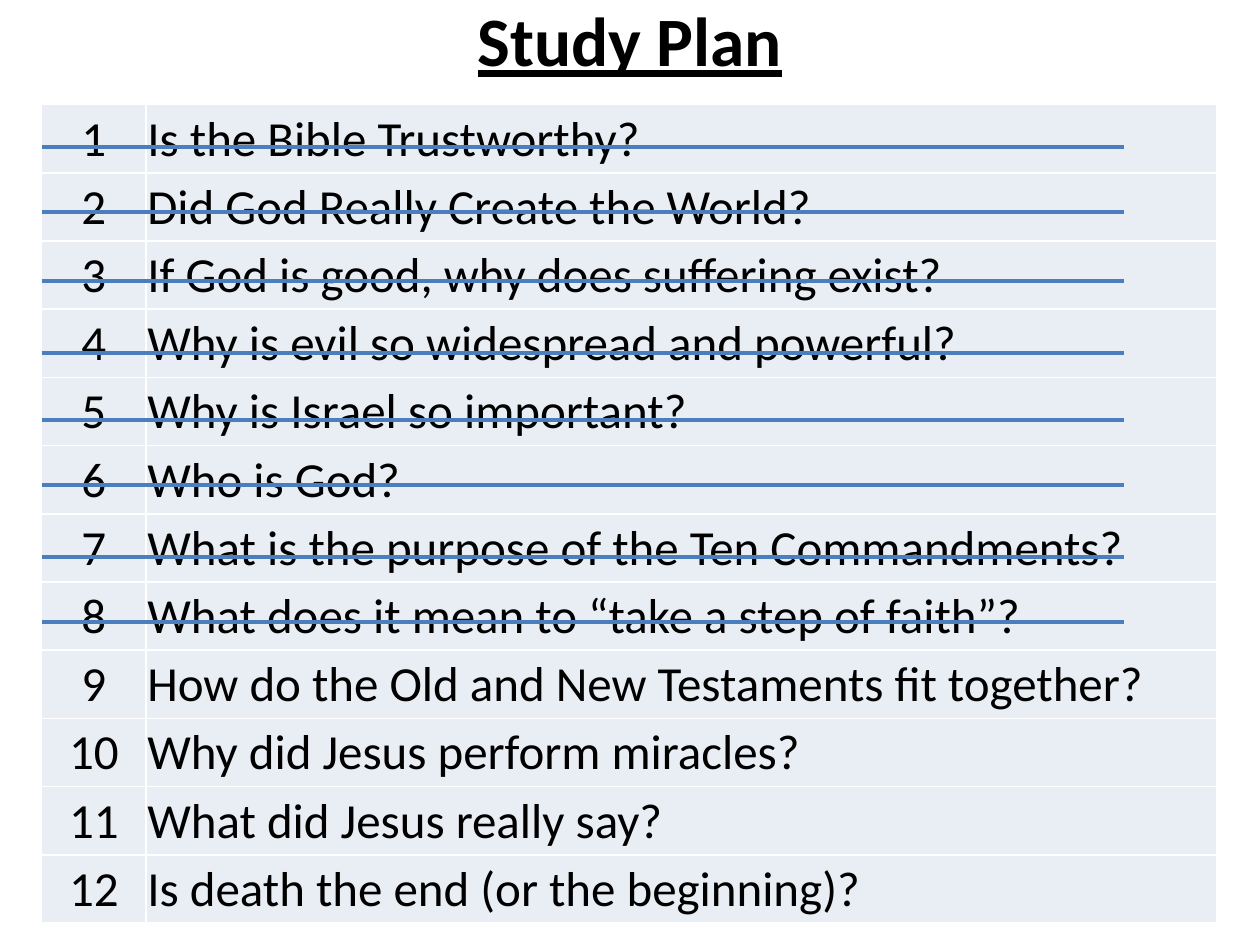
from lxml.etree import SubElement
from pptx import Presentation
from pptx.dml.color import RGBColor
from pptx.enum.shapes import MSO_CONNECTOR
from pptx.enum.text import MSO_ANCHOR, PP_ALIGN
from pptx.oxml.ns import qn
from pptx.util import Inches, Pt

COLORS = {"text": "000000", "cell": "E9EDF4", "border": "FFFFFF", "strike": "4B7EBC"}
FONT = "Calibri"
QUESTIONS = [
    "Is the Bible Trustworthy?",
    "Did God Really Create the World?",
    "If God is good, why does suffering exist?",
    "Why is evil so widespread and powerful?",
    "Why is Israel so important?",
    "Who is God?",
    "What is the purpose of the Ten Commandments?",
    "What does it mean to “take a step of faith”?",
    "How do the Old and New Testaments fit together?",
    "Why did Jesus perform miracles?",
    "What did Jesus really say?",
    "Is death the end (or the beginning)?",
]
STRIKE_OFFSETS = [0.34, 0.85, 1.4, 1.97, 2.5, 3.02, 3.59, 4.11]


def add_run(paragraph, text, size, align):
    """Add one run in the slide's font and align its paragraph."""
    paragraph.alignment = align
    run = paragraph.add_run()
    run.text = text
    run.font.name = FONT
    run.font.size = Pt(size)
    run.font.color.rgb = RGBColor.from_string(COLORS["text"])
    return run


def add_title(slide, left, top, width, height):
    """Place the underlined heading in the given box."""
    box = slide.shapes.add_textbox(Inches(left), Inches(top), Inches(width), Inches(height))
    frame = box.text_frame
    frame.word_wrap = True
    frame.vertical_anchor = MSO_ANCHOR.MIDDLE
    run = add_run(frame.paragraphs[0], "Study Plan", 39.6, PP_ALIGN.CENTER)
    run.font.bold = True
    run.font.underline = True


def fill_cell(cell, text, align):
    """Write one table cell with its margins, borders and fill."""
    cell.vertical_anchor = MSO_ANCHOR.MIDDLE
    cell.margin_left = cell.margin_right = cell.margin_top = Inches(0.01)
    cell.margin_bottom = 0
    properties = cell._tc.get_or_add_tcPr()
    for side in ("a:lnL", "a:lnR", "a:lnT", "a:lnB"):
        border = SubElement(properties, qn(side), w=str(Pt(1)))
        border_fill = SubElement(border, qn("a:solidFill"))
        SubElement(border_fill, qn("a:srgbClr"), val=COLORS["border"])
    cell.fill.solid()
    cell.fill.fore_color.rgb = RGBColor.from_string(COLORS["cell"])
    add_run(cell.text_frame.paragraphs[0], text, 28, align)


def add_question_table(slide, left, top, width, height):
    """Place the numbered questions in the given box."""
    frame = slide.shapes.add_table(
        len(QUESTIONS), 2, Inches(left), Inches(top), Inches(width), Inches(height)
    )
    table = frame.table
    number_width = Inches(0.83)
    table.columns[0].width = number_width
    table.columns[1].width = Inches(width) - number_width
    for index, question in enumerate(QUESTIONS):
        fill_cell(table.cell(index, 0), str(index + 1), PP_ALIGN.CENTER)
        fill_cell(table.cell(index, 1), question, PP_ALIGN.LEFT)


def add_strikes(slide, left, top, width):
    """Strike out the finished questions below the given top edge."""
    for offset in STRIKE_OFFSETS:
        y = Inches(top + offset)
        strike = slide.shapes.add_connector(
            MSO_CONNECTOR.STRAIGHT, Inches(left), y, Inches(left + width), y
        )
        strike.line.color.rgb = RGBColor.from_string(COLORS["strike"])
        strike.line.width = Pt(2.25)
        SubElement(strike._element.spPr, qn("a:effectLst"))


def main():
    """Build and save the study plan slide."""
    presentation = Presentation()
    presentation.slide_width = Inches(10)
    presentation.slide_height = Inches(7.5)
    slide = presentation.slides.add_slide(presentation.slide_layouts[6])
    add_title(slide, 0.5, -0.08, 9, 0.78)
    add_question_table(slide, 0.33, 0.83, 9.33, 6.5)
    add_strikes(slide, 0.33, 0.83, 8.59)
    presentation.save("out.pptx")


if __name__ == "__main__":
    main()
